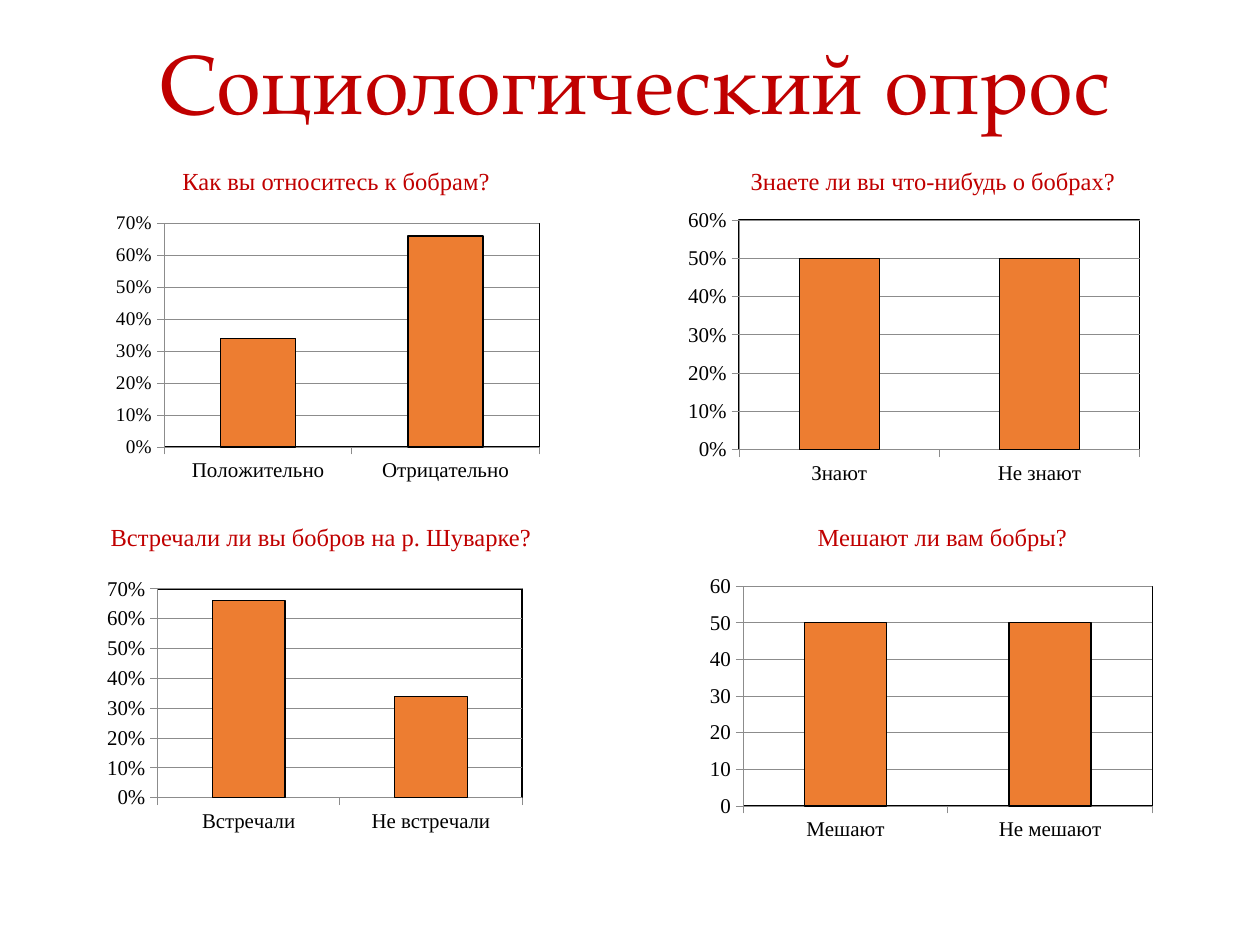
import pptx
import pptx.chart.data
import pptx.dml.color
import pptx.enum.chart
import pptx.enum.text
import pptx.oxml
import pptx.oxml.ns
import pptx.util
from pptx.util import Inches

RED = pptx.dml.color.RGBColor(0xC0, 0x00, 0x00)
ORANGE = pptx.dml.color.RGBColor(0xED, 0x7D, 0x31)
GRAY = pptx.dml.color.RGBColor(0x8C, 0x8C, 0x8C)
BLACK = pptx.dml.color.RGBColor(0x00, 0x00, 0x00)
TITLE_FONT = "TeX Gyre Pagella"
BODY_FONT = "Times New Roman"

SURVEYS = [
    dict(question="Как вы относитесь к бобрам?", question_box=(1.35, 1.27, 2.66, 0.34),
         chart_box=(0.85, 1.64, 3.5, 2.22), plot_box=(0.13, 0.06, 0.85, 0.8),
         answers=("Положительно", "Отрицательно"), values=(0.34, 0.66),
         top=0.7, step=0.1, number_format="0%", value_size=11),
    dict(question="Знаете ли вы что-нибудь о бобрах?", question_box=(5.86, 1.27, 3.26, 0.34),
         chart_box=(5.38, 1.61, 3.74, 2.28), plot_box=(0.13, 0.06, 0.85, 0.8),
         answers=("Знают", "Не знают"), values=(0.5, 0.5),
         top=0.6, step=0.1, number_format="0%"),
    dict(question="Встречали ли вы бобров на р. Шуварке?", question_box=(0.78, 4.09, 3.57, 0.34),
         chart_box=(0.85, 4.52, 3.43, 2.21), plot_box=(0.11, 0.07, 0.85, 0.75),
         answers=("Встречали", "Не встречали"), values=(0.66, 0.34),
         top=0.7, step=0.1, number_format="0%"),
    dict(question="Мешают ли вам бобры?", question_box=(6.39, 4.09, 2.2, 0.34),
         chart_box=(5.57, 4.52, 3.65, 2.21), plot_box=(0.09, 0.06, 0.89, 0.79),
         answers=("Мешают", "Не мешают"), values=(50, 50),
         top=60, step=10, number_format="General"),
]


def set_font(font, name, size, color):
    font.name = name
    font.size = pptx.util.Pt(size)
    font.color.rgb = color


def set_line(line, color, width):
    line.color.rgb = color
    line.width = pptx.util.Pt(width)


def add_title(page, box):
    title = page.shapes.title
    title.left, title.top, title.width, title.height = map(Inches, box)
    frame = title.text_frame
    frame.text = "Социологический опрос"
    frame.auto_size = pptx.enum.text.MSO_AUTO_SIZE.NONE
    frame.vertical_anchor = pptx.enum.text.MSO_ANCHOR.BOTTOM
    para = frame.paragraphs[0]
    para.alignment = pptx.enum.text.PP_ALIGN.CENTER
    para.line_spacing = 0.9
    set_font(para.font, TITLE_FONT, 48, RED)


def add_question(page, box, question):
    frame = page.shapes.add_textbox(*map(Inches, box)).text_frame
    frame.word_wrap = False
    frame.auto_size = pptx.enum.text.MSO_AUTO_SIZE.SHAPE_TO_FIT_TEXT
    frame.text = question
    set_font(frame.paragraphs[0].font, BODY_FONT, 14, RED)


def frame_plot(chart, plot_box):
    namespaces = pptx.oxml.ns.nsdecls("c", "a")
    qn = pptx.oxml.ns.qn
    area = chart.element.find(".//" + qn("c:plotArea"))
    for layout in area.findall(qn("c:layout")):
        area.remove(layout)
    sizes = "".join(f'<c:{key} val="{value}"/>' for key, value in zip("xywh", plot_box))
    area.insert(0, pptx.oxml.parse_xml(
        f'<c:layout {namespaces}><c:manualLayout><c:layoutTarget val="inner"/>'
        f'<c:xMode val="edge"/><c:yMode val="edge"/>{sizes}</c:manualLayout></c:layout>'))
    area.append(pptx.oxml.parse_xml(
        f'<c:spPr {namespaces}><a:noFill/><a:ln w="9525"><a:solidFill>'
        f'<a:srgbClr val="{BLACK}"/></a:solidFill></a:ln></c:spPr>'))


def add_answers(page, box, plot_box, answers, values, top, step, number_format, value_size=12):
    data = pptx.chart.data.CategoryChartData(number_format=number_format)
    data.categories = answers
    data.add_series("Series 1", values)
    chart = page.shapes.add_chart(
        pptx.enum.chart.XL_CHART_TYPE.COLUMN_CLUSTERED, *map(Inches, box), data).chart
    chart.has_legend = False
    chart.has_title = False
    set_font(chart.font, "Calibri", 10, BLACK)

    plot = chart.plots[0]
    plot.gap_width = 150
    plot.vary_by_categories = False
    columns = plot.series[0].format
    columns.fill.solid()
    columns.fill.fore_color.rgb = ORANGE
    set_line(columns.line, BLACK, 0.75)

    for axis, size in ((chart.category_axis, 12), (chart.value_axis, value_size)):
        set_font(axis.tick_labels.font, BODY_FONT, size, BLACK)
        set_line(axis.format.line, GRAY, 0.5)
        axis.major_tick_mark = pptx.enum.chart.XL_TICK_MARK.OUTSIDE
    scale = chart.value_axis
    scale.minimum_scale = 0
    scale.maximum_scale = top
    scale.major_unit = step
    scale.tick_labels.number_format = number_format
    scale.tick_labels.number_format_is_linked = False
    set_line(scale.major_gridlines.format.line, GRAY, 0.5)
    frame_plot(chart, plot_box)


def add_survey(page, question, question_box, chart_box, **chart_parts):
    add_answers(page, chart_box, **chart_parts)
    add_question(page, question_box, question)


def main():
    deck = pptx.Presentation()
    deck.slide_width = Inches(10)
    deck.slide_height = Inches(7.5)
    page = deck.slides.add_slide(deck.slide_layouts.get_by_name("Title Only"))
    add_title(page, (0.44, 0, 9.2, 1.1))
    for survey in SURVEYS:
        add_survey(page, **survey)
    deck.save("out.pptx")


if __name__ == "__main__":
    main()
